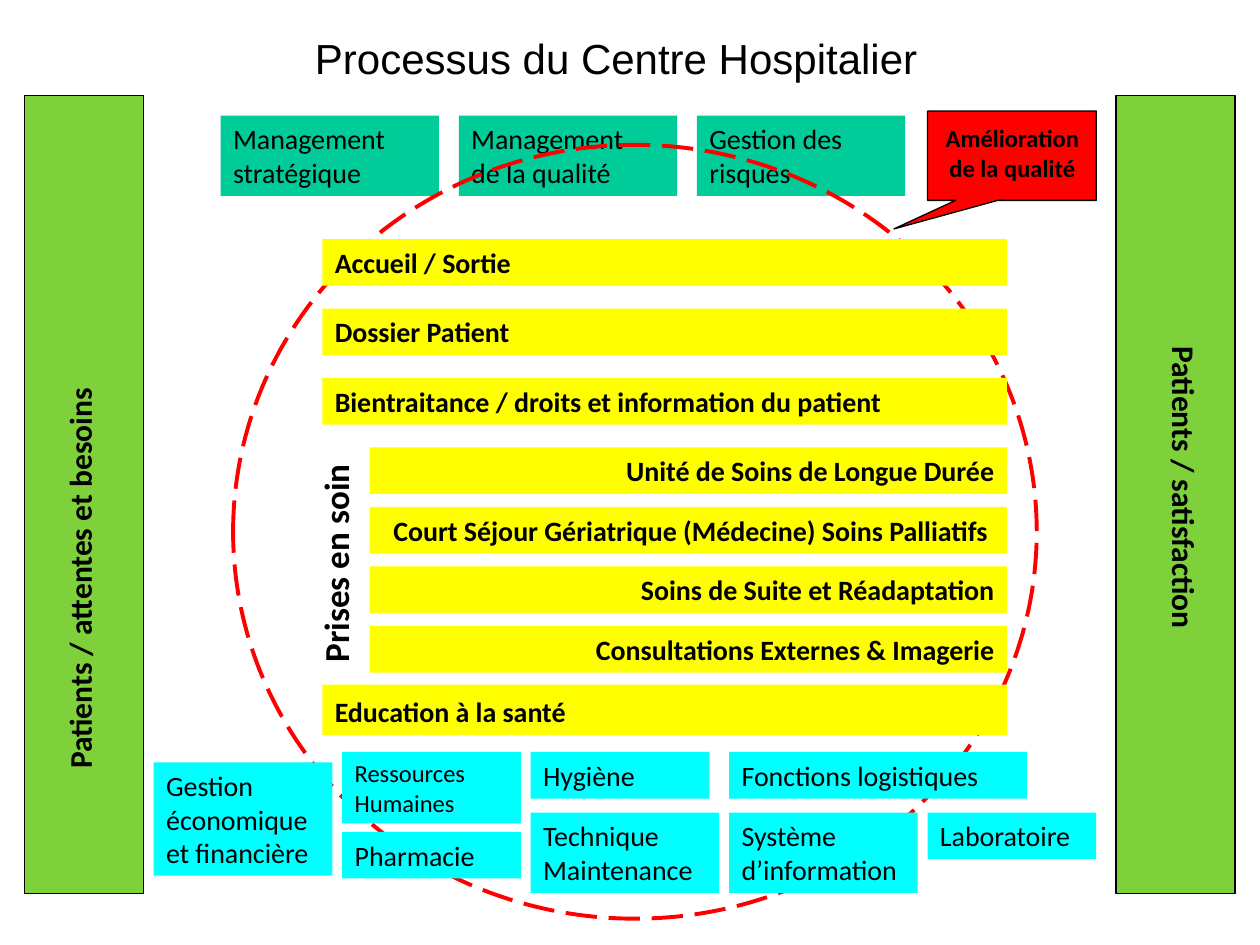
"""Build the process map of a hospital: management, care and support processes."""
from pptx import Presentation
from pptx.dml.color import RGBColor
from pptx.enum import dml, shapes, text
from pptx.util import Inches, Pt

THEME = {
    "ink": "000000", "patients": "7FD13B", "management": "00CC99",
    "care": "FFFF00", "support": "00FFFF", "quality": "FF0000",
    "body_font": "Calibri", "title_font": "Arial",
    "title": 24, "section": 20, "side": 18, "body": 16, "small": 14,
    "thin": 0.75, "ring": 2.25,
}
LEFT, CENTER, RIGHT = text.PP_ALIGN.LEFT, text.PP_ALIGN.CENTER, text.PP_ALIGN.RIGHT

deck = Presentation()
deck.slide_width, deck.slide_height = Inches(10), Inches(7.5)
slide = deck.slides.add_slide(deck.slide_layouts[6])
CELL = deck.slide_width / 127


def outline(preset, area, fill, line, weight):
    figure = slide.shapes.add_shape(preset, *(round(n * CELL) for n in area))
    figure.shadow.inherit = False
    if fill:
        figure.fill.solid()
        figure.fill.fore_color.rgb = RGBColor.from_string(THEME[fill])
    else:
        figure.fill.background()
    figure.line.color.rgb = RGBColor.from_string(THEME[line])
    figure.line.width = Pt(THEME[weight])
    return figure


def label(words, area, fill=None, size="body", bold=False, align=LEFT,
          font="body_font", wrap=True):
    box = slide.shapes.add_textbox(*(round(n * CELL) for n in area))
    if fill:
        box.fill.solid()
        box.fill.fore_color.rgb = RGBColor.from_string(THEME[fill])
    frame = box.text_frame
    frame.word_wrap = wrap
    frame.auto_size = text.MSO_AUTO_SIZE.SHAPE_TO_FIT_TEXT
    frame.text = words
    style = {"size": Pt(THEME[size]), "bold": bold, "name": THEME[font]}
    for paragraph in frame.paragraphs:
        paragraph.alignment = align
        for run in paragraph.runs:
            for key, value in style.items():
                setattr(run.font, key, value)
            run.font.color.rgb = RGBColor.from_string(THEME["ink"])
    return box


SIDE_TOP, SIDE_WIDTH, SIDE_HEIGHT = 9.65, 12, 80.4
LINE_HEIGHT, PAIR_HEIGHT = 4.7, 8.1

# fmt: off
outline(shapes.MSO_SHAPE.RECTANGLE, (2.5, SIDE_TOP, SIDE_WIDTH, SIDE_HEIGHT),
        "patients", "ink", "thin")
needs = label("Patients / attentes et besoins", (5.45, 18.65, 6.4, 60.1),
              size="side", bold=True, align=CENTER)
needs.rotation = 180
gap = needs.text_frame.paragraphs[0].add_run()
gap.text, gap.font.size = " ", Pt(THEME["body"])

management = [("Management stratégique", 22), ("Management\nde la qualité", 22),
              ("Gestion des risques", 21)]
for column, (process, width) in enumerate(management):
    label(process, (22.25 + 24 * column, 11.65, width, PAIR_HEIGHT), "management")

ring = outline(shapes.MSO_SHAPE.OVAL, (23.5, 14.6, 81, 78), None, "quality", "ring")
ring.line.dash_style = dml.MSO_LINE.LONG_DASH

outline(shapes.MSO_SHAPE.RECTANGLE, (112.5, SIDE_TOP, SIDE_WIDTH, SIDE_HEIGHT),
        "patients", "ink", "thin")
satisfaction = label("Patients / satisfaction", (115.55, 33.65, 6.4, 60.1),
                     size="side", bold=True)
for side in (needs, satisfaction):
    side.text_frame._txBody.bodyPr.set("vert", "eaVert")

callout = outline(shapes.MSO_SHAPE.RECTANGULAR_CALLOUT, (93.5, 11.2, 17, 9),
                  "quality", "ink", "thin")
callout.adjustments[0], callout.adjustments[1] = -0.7, 0.82
label("Amélioration de la qualité", (92.85, 11.8, 18.4, 7.2),
      size="small", bold=True, align=CENTER)

UPPER, LOWER = 75.8, 81.9
support = [
    ("Fonctions logistiques", 73.5, UPPER, 30, LINE_HEIGHT, "body"),
    ("Gestion économique et financière", 15.5, 76.85, 18, 11.4, "body"),
    ("Ressources Humaines", 34.5, UPPER, 18, 7.2, "small"),
    ("Pharmacie", 34.5, 83.85, 18, LINE_HEIGHT, "body"),
    ("Technique Maintenance", 53.5, LOWER, 19, PAIR_HEIGHT, "body"),
    ("Hygiène", 53.5, UPPER, 18, LINE_HEIGHT, "body"),
    ("Système d’information", 73.5, LOWER, 19, PAIR_HEIGHT, "body"),
    ("Laboratoire", 93.5, LOWER, 17, LINE_HEIGHT, "body"),
]
for process, *area, size in support:
    label(process, area, "support", size)

CARE_LEFT, UNIT_LEFT, CARE_RIGHT = 32.5, 37.25, 101.5
shared = ["Accueil / Sortie", "Dossier Patient",
          "Bientraitance / droits et information du patient"]
for row, process in enumerate(shared):
    label(process, (CARE_LEFT, 24.1 + 7 * row, CARE_RIGHT - CARE_LEFT, LINE_HEIGHT),
          "care", bold=True)

units = ["Unité de Soins de Longue Durée",
         "Court Séjour Gériatrique (Médecine) Soins Palliatifs ",
         "Soins de Suite et Réadaptation", "Consultations Externes & Imagerie"]
for row, unit in enumerate(units):
    label(unit, (UNIT_LEFT, 45.1 + 6 * row, CARE_RIGHT - UNIT_LEFT, LINE_HEIGHT),
          "care", bold=True, align=RIGHT)

education = label("Education à la santé", (CARE_LEFT, 69, CARE_RIGHT - CARE_LEFT, 5.1),
                  "care", bold=True)
gap = education.text_frame.paragraphs[0].add_run()
gap.text, gap.font.size = " ", Pt(THEME["side"])

care = label("Prises en soin", (21.85, 54, 24, 5.6), size="section", bold=True, align=CENTER)
care.rotation = 270

label("Processus du Centre Hospitalier", (30.5, 2.7, 66.3, 6.35),
      size="title", font="title_font", wrap=False)

deck.save("out.pptx")
